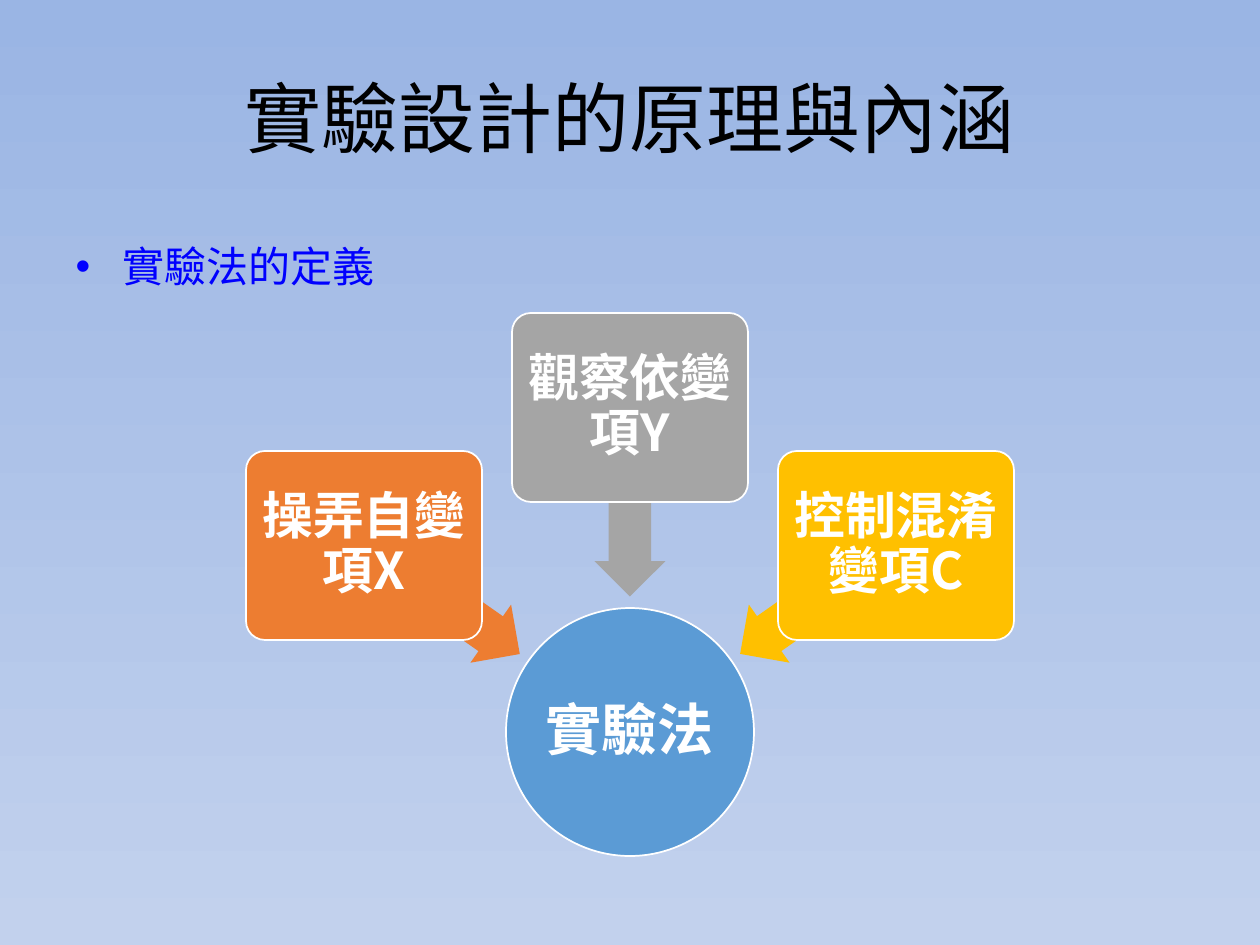
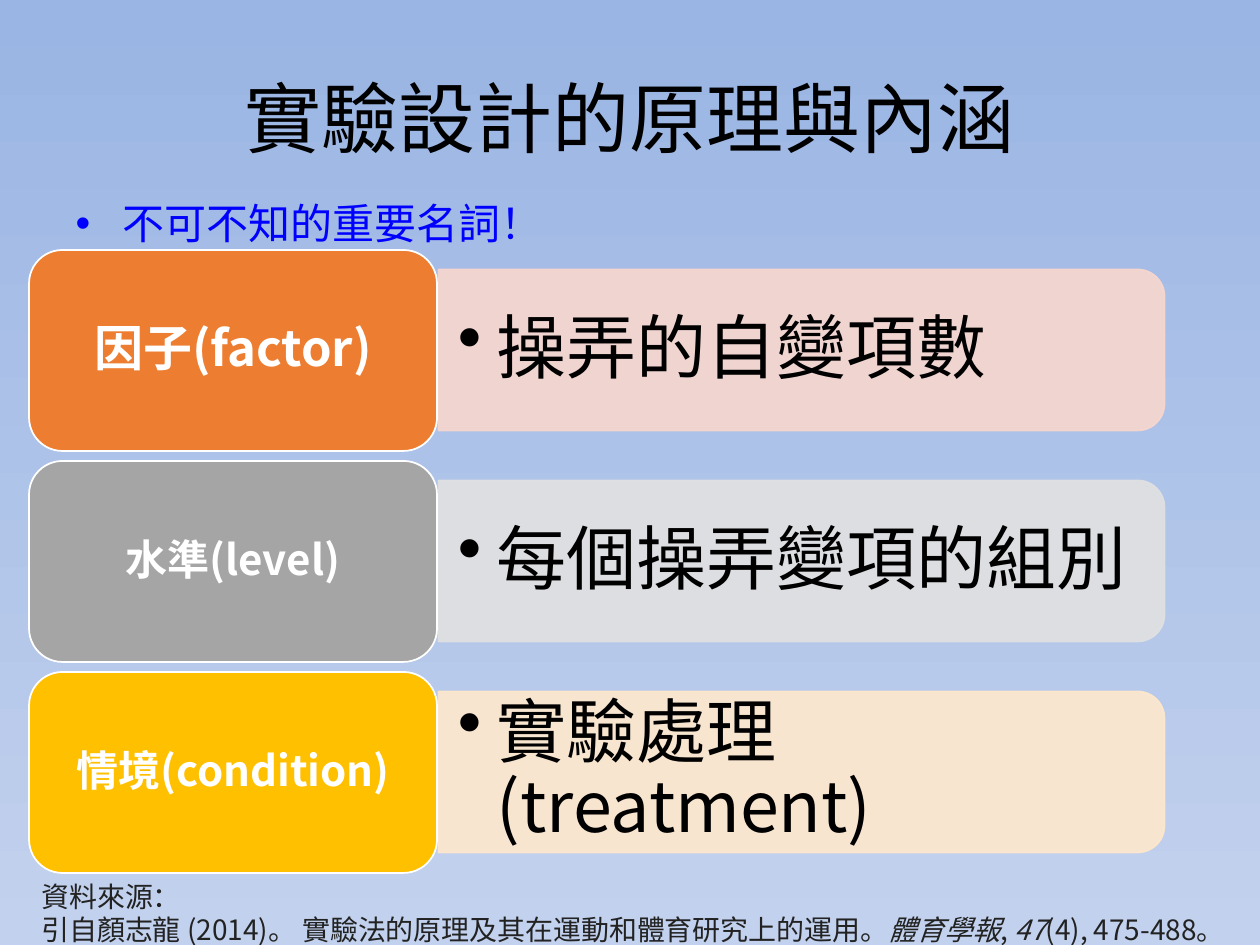
"""Build two slides on the principles of experimental design."""
from lxml import etree
from pptx import Presentation
from pptx import util as u
from pptx.dml.color import RGBColor
from pptx.enum import shapes, text
from pptx.oxml.ns import qn

PX = u.Inches(1) / 126
FONT = "Noto Sans CJK SC"
BLACK = RGBColor(0x00, 0x00, 0x00)
WHITE = RGBColor(0xFF, 0xFF, 0xFF)
BLUE = RGBColor(0x00, 0x00, 0xFF)
CIRCLE_BLUE = RGBColor(0x5B, 0x9B, 0xD5)
ORANGE = RGBColor(0xED, 0x7D, 0x31)
GRAY = RGBColor(0xA5, 0xA5, 0xA5)
GOLD = RGBColor(0xFF, 0xC0, 0x00)
PALE_ORANGE = RGBColor(0xF8, 0xD7, 0xCE)
PALE_GRAY = RGBColor(0xE1, 0xE1, 0xE1)
PALE_GOLD = RGBColor(0xFF, 0xE8, 0xCC)
SOURCE_GRAY = RGBColor(0x22, 0x22, 0x22)
SKY = [RGBColor(0x9A, 0xB5, 0xE4), RGBColor(0xC2, 0xD1, 0xED)]
SHAPE = shapes.MSO_SHAPE


def write(tf, content, size, color, bold=False, align=None, spacing=None, inset=None):
    """Fill a text frame with one formatted paragraph."""
    tf.word_wrap = True
    p = tf.paragraphs[0]
    p.text = content
    p.alignment = align
    p.line_spacing = spacing
    if inset:
        tf.margin_left = tf.margin_right = round(inset[0] * PX)
        tf.margin_top = tf.margin_bottom = round(inset[1] * PX)
    for r in p.runs:
        r.font.size = u.Pt(size)
        r.font.bold = bold
        r.font.name = FONT
        r.font.color.rgb = color
        etree.SubElement(r._r.get_or_add_rPr(), qn("a:ea"), typeface=FONT)
    return p


def add_shape(s, kind, box, fill, line=None):
    """Add a flat preset shape whose box is given in px."""
    sp = s.shapes.add_shape(kind, *[round(v * PX) for v in box])
    sp.shadow.inherit = False
    sp.fill.solid()
    sp.fill.fore_color.rgb = fill
    if line is None:
        sp.line.fill.background()
    else:
        sp.line.color.rgb = line
        sp.line.width = u.Pt(1)
    sp.text_frame.vertical_anchor = text.MSO_ANCHOR.MIDDLE
    return sp


prs = Presentation()
prs.slide_width = u.Inches(10)
prs.slide_height = u.Inches(7.5)
CENTER = text.PP_ALIGN.CENTER

bg = prs.slide_master.background.fill
bg.gradient()
bg.gradient_angle = 270
for stop, color in zip(bg.gradient_stops, SKY):
    stop.color.rgb = color

slides = []
for lead, top in [("實驗法的定義", 218), ("不可不知的重要名詞！", 175)]:
    s = prs.slides.add_slide(prs.slide_layouts[1])
    write(s.shapes.title.text_frame, "實驗設計的原理與內涵", 44, BLACK, align=CENTER)
    body = s.placeholders[1]
    body.left, body.top, body.width, body.height = [round(v * PX) for v in (63, top, 1134, 94)]
    body.text_frame.auto_size = text.MSO_AUTO_SIZE.NONE
    p = write(body.text_frame, lead, 24, BLUE, spacing=u.Pt(38))
    p.space_before = u.Pt(0)
    slides.append(s)

s = slides[0]
circle = add_shape(s, SHAPE.OVAL, (506, 608, 248, 248), CIRCLE_BLUE, WHITE)
write(circle.text_frame, "實驗法", 32, WHITE, True, CENTER, 0.9, (3, 3))
steps = [
    ("操弄自變項X", ORANGE, 451, 564, 215),
    ("觀察依變項Y", GRAY, 313, 466, 270),
    ("控制混淆變項C", GOLD, 451, 564, 325),
]
for i, (label, color, card_top, arrow_top, angle) in enumerate(steps):
    arrow = add_shape(s, SHAPE.LEFT_ARROW, (347 + 188 * i, arrow_top, 190, 71), color)
    arrow.adjustments[0] = 0.6
    arrow.rotation = angle
    card = add_shape(s, SHAPE.ROUNDED_RECTANGLE, (246 + 266 * i, card_top, 236, 189), color, WHITE)
    card.adjustments[0] = 0.1
    write(card.text_frame, label, 29, WHITE, True, CENTER, 0.9, (8, 8))

s = slides[1]
terms = [
    ("因子(factor)", 28, ORANGE, "操弄的自變項數", PALE_ORANGE),
    ("水準(level)", 24, GRAY, "每個操弄變項的組別", PALE_GRAY),
    ("情境(condition)", 24, GOLD, "實驗處理(treatment)", PALE_GOLD),
]
for i, (term, size, color, meaning, pale) in enumerate(terms):
    top = 250 + 211 * i
    middle = top + 100
    bar = add_shape(s, SHAPE.ROUND_2_SAME_RECTANGLE, (721, middle - 363, 161, 726), pale, pale)
    bar.rotation = 90
    for clr in bar._element.spPr.iter(qn("a:srgbClr")):
        etree.SubElement(clr, qn("a:alpha"), val="90000")

    tb = s.shapes.add_textbox(*[round(v * PX) for v in (437, middle - 72, 718, 145)])
    tb.text_frame.vertical_anchor = text.MSO_ANCHOR.MIDDLE
    p = write(tb.text_frame, meaning, 40, BLACK, spacing=0.9, inset=(21, 10))
    pPr = p._p.get_or_add_pPr()
    pPr.set("marL", str(round(39 * PX)))
    pPr.set("indent", str(round(-39 * PX)))
    etree.SubElement(pPr, qn("a:buChar"), char="•")

    box = add_shape(s, SHAPE.ROUNDED_RECTANGLE, (29, top, 408, 201), color, WHITE)
    write(box.text_frame, term, size, WHITE, True, CENTER, 0.9)

tb = s.shapes.add_textbox(*[round(v * PX) for v in (29, 873, 1263, 81)])
tf = tb.text_frame
write(tf, "資料來源：", 16, SOURCE_GRAY)
p = tf.add_paragraph()
citation = [
    ("引自顏志龍 (2014)。 實驗法的原理及其在運動和體育研究上的運用。", False),
    ("體育學報", True),
    (", ", False),
    ("47", True),
    ("(4), 475-488。", False),
]
for part, italic in citation:
    r = p.add_run()
    r.text = part
    r.font.size = u.Pt(16)
    r.font.italic = italic
    r.font.name = FONT
    r.font.color.rgb = SOURCE_GRAY
    etree.SubElement(r._r.get_or_add_rPr(), qn("a:ea"), typeface=FONT)

prs.save("out.pptx")
